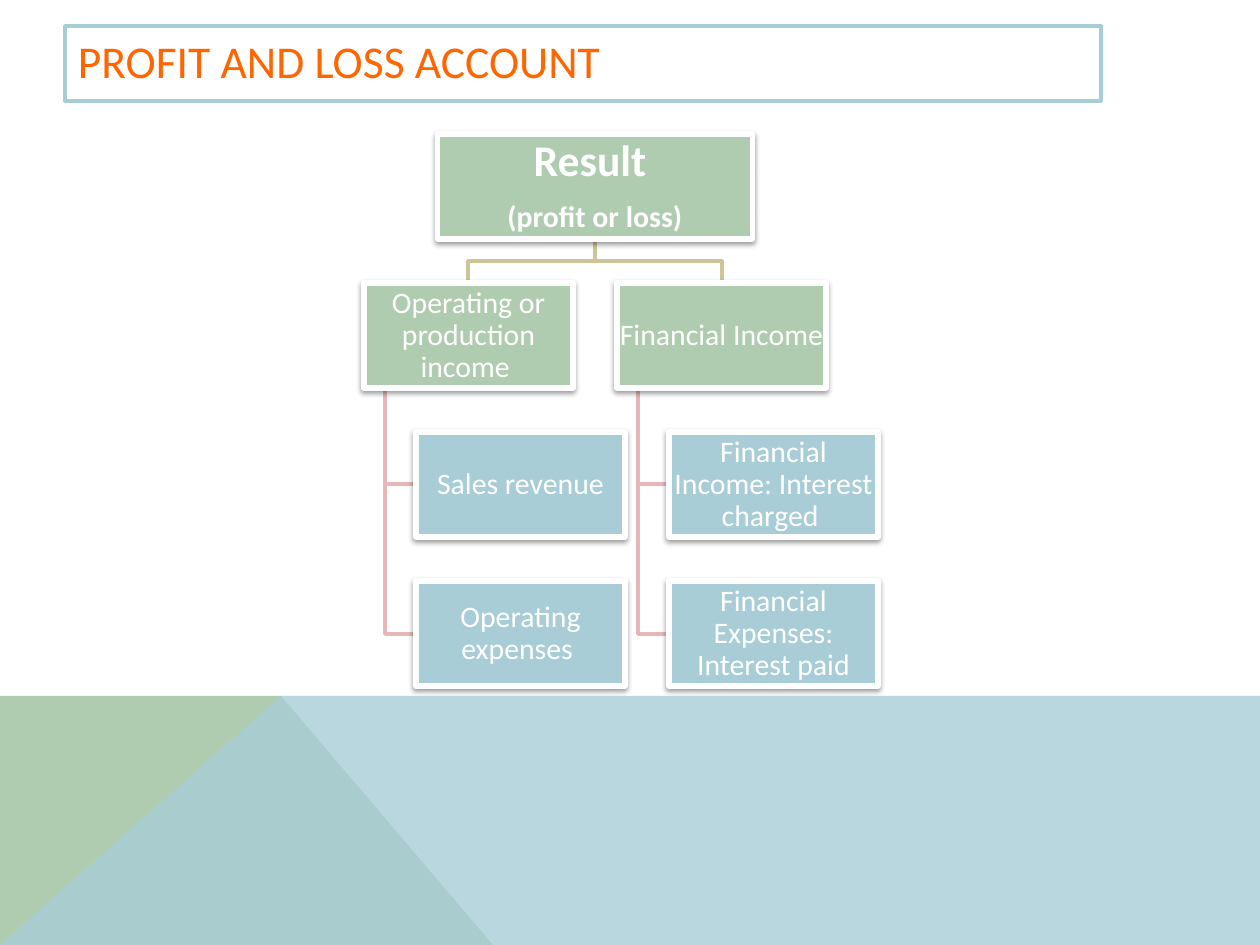
from lxml import etree
from pptx import Presentation
from pptx.dml.color import RGBColor
from pptx.enum.shapes import MSO_SHAPE
from pptx.enum.text import MSO_ANCHOR, PP_ALIGN
from pptx.oxml.ns import qn
from pptx.util import Pt

RECT = MSO_SHAPE.RECTANGLE
MIDDLE = MSO_ANCHOR.MIDDLE
LEFT, CENTER = PP_ALIGN.LEFT, PP_ALIGN.CENTER
FONT = "Calibri"
GREEN, BLUE, WHITE, ORANGE = "B0CCB0", "A8CDD7", "FFFFFF", "FF6600"
STEM, BRANCH = "CEC597", "E7B7B7"

# Content: paragraphs are (text, size, bold)
TITLE = "PROFIT AND LOSS ACCOUNT"
RESULT = [("Result ", 25, True), ("(profit or loss)", 17, True)]
INCOMES = [
    ("Operating or production income ", ["Sales revenue", "Operating expenses "]),
    ("Financial Income", ["Financial Income: Interest charged ",
                          "Financial Expenses: Interest paid"]),
]
BACKGROUND = [
    ([(0, 945), (0, 696), (281, 696), (493, 945)], GREEN, None),
    ([(0, 945), (281, 696), (1260, 696), (1260, 945)], BLUE, 80),
]

# Layout in px, 126 to the inch
PX = 914400 / 126
CENTER_X, TOP, ROW_PITCH, COLUMN_PITCH = 595, 134, 149, 253
RESULT_W, BOX_W, BOX_H = 315, 209, 105
INDENT, BRANCH_INSET = 52, 21


def px(length):
    return round(length * PX)


def color(hex_code):
    return RGBColor.from_string(hex_code)


def add_path(points, close):
    builder = slide.shapes.build_freeform(*points[0], scale=PX)
    builder.add_line_segments(points[1:], close=close)
    outline = builder.convert_to_shape()
    outline.shadow.inherit = False
    return outline


def add_link(points, hex_code):
    link = add_path(points, close=False)
    link.fill.background()
    link.line.color.rgb = color(hex_code)
    link.line.width = Pt(2)


def add_box(x, y, w, h, fill, line, line_width):
    box = slide.shapes.add_shape(RECT, px(x), px(y), px(w), px(h))
    box.shadow.inherit = False
    box.fill.solid()
    box.fill.fore_color.rgb = color(fill)
    box.line.color.rgb = color(line)
    box.line.width = Pt(line_width)
    return box


def write(box, paragraphs, hex_code, align, inset_x, inset_y):
    frame = box.text_frame
    frame.word_wrap = True
    frame.vertical_anchor = MIDDLE
    frame.margin_left = frame.margin_right = px(inset_x)
    frame.margin_top = frame.margin_bottom = px(inset_y)
    for i, (text, size, bold) in enumerate(paragraphs):
        paragraph = frame.add_paragraph() if i else frame.paragraphs[0]
        paragraph.alignment = align
        paragraph.line_spacing = 0.9
        paragraph.space_before = Pt(8.8 if i else 0)
        run = paragraph.add_run()
        run.text = text
        run.font.name, run.font.size, run.font.bold = FONT, Pt(size), bold
        run.font.color.rgb = color(hex_code)


def add_node(x, y, w, fill, paragraphs, inset=1):
    node = add_box(x, y, w, BOX_H, fill, WHITE, 3)
    effects = node._element.spPr.find(qn("a:effectLst"))
    shadow = etree.SubElement(effects, qn("a:outerShdw"), blurRad="39370",
                              dist="20320", dir="5400000", rotWithShape="0")
    black = etree.SubElement(shadow, qn("a:srgbClr"), val="000000")
    etree.SubElement(black, qn("a:alpha"), val="38000")
    write(node, paragraphs, WHITE, CENTER, inset, inset)


def row_top(row):
    return TOP + row * ROW_PITCH


prs = Presentation()
prs.slide_width, prs.slide_height = px(1260), px(945)
slide = prs.slides.add_slide(prs.slide_layouts[6])

# Background bands
for points, fill, opacity in BACKGROUND:
    band = add_path(points, close=True)
    band.fill.solid()
    band.fill.fore_color.rgb = color(fill)
    band.line.fill.background()
    if opacity:
        tint = band._element.spPr.find(qn("a:solidFill"))[0]
        etree.SubElement(tint, qn("a:alpha"), val=str(opacity * 1000))

# Title
title = add_box(65, 26, 1036, 75, WHITE, BLUE, 2)
write(title, [(TITLE, 26, False)], ORANGE, LEFT, 13, 6)

# Links, behind the boxes
first_center = CENTER_X - COLUMN_PITCH / 2
income_centers = [first_center + i * COLUMN_PITCH for i in range(len(INCOMES))]
result_bottom = TOP + BOX_H
bend_y = (result_bottom + row_top(1)) / 2
for center, (_, parts) in zip(income_centers, INCOMES):
    add_link([(CENTER_X, result_bottom), (CENTER_X, bend_y),
              (center, bend_y), (center, row_top(1))], STEM)
    left = center - BOX_W / 2
    branch_x = left + BRANCH_INSET
    for row in range(2, 2 + len(parts)):
        part_y = row_top(row) + BOX_H / 2
        add_link([(branch_x, row_top(1) + BOX_H), (branch_x, part_y),
                  (left + INDENT, part_y)], BRANCH)

# Boxes
add_node(CENTER_X - RESULT_W / 2, TOP, RESULT_W, GREEN, RESULT, inset=2)
for center, (income, parts) in zip(income_centers, INCOMES):
    left = center - BOX_W / 2
    add_node(left, row_top(1), BOX_W, GREEN, [(income, 17, False)])
    for row, part in enumerate(parts, start=2):
        add_node(left + INDENT, row_top(row), BOX_W, BLUE, [(part, 17, False)])

prs.save("out.pptx")
